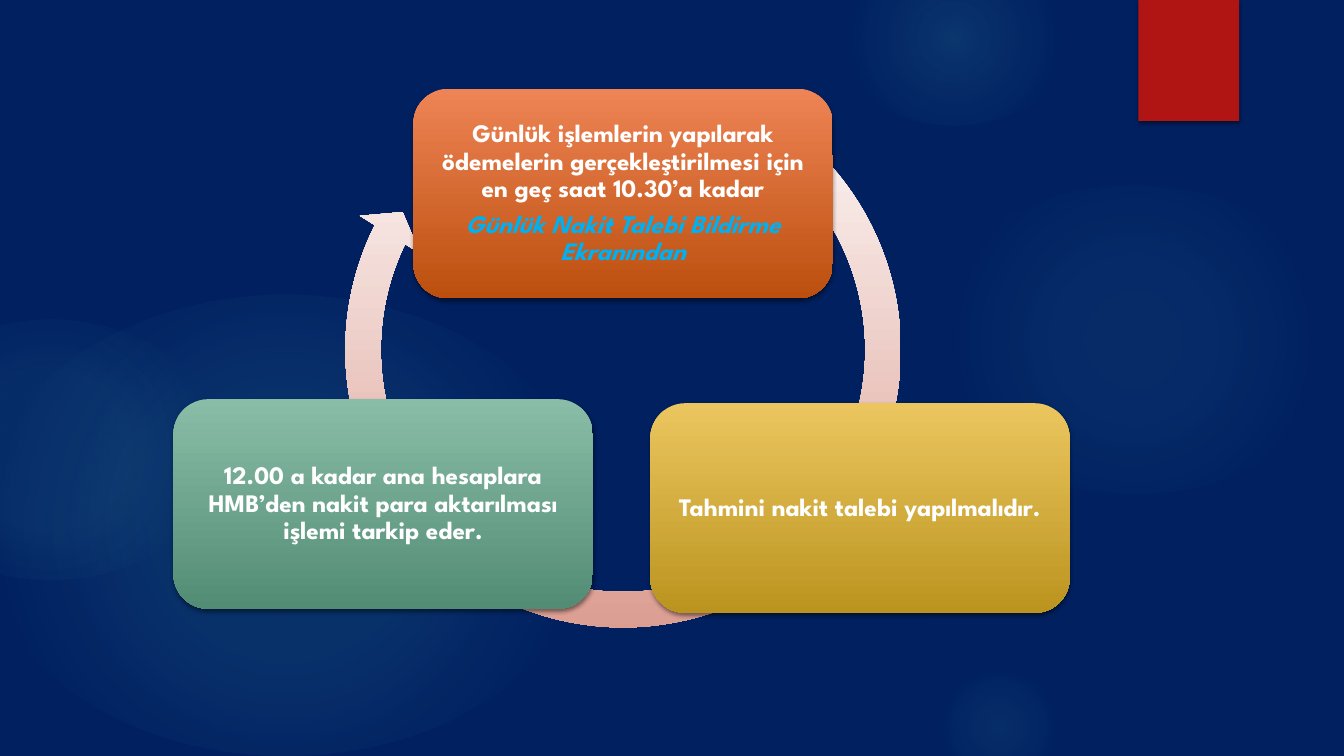
from dataclasses import dataclass

from pptx import Presentation
from pptx.dml.color import RGBColor
from pptx.enum.shapes import MSO_SHAPE as Preset
from pptx.enum.text import MSO_ANCHOR as Anchor, PP_ALIGN as Align
from pptx.oxml import parse_xml
from pptx.oxml.ns import nsdecls, qn
from pptx.shapes.autoshape import Shape
from pptx.slide import Slide
from pptx.util import Pt

PX = 9144


@dataclass(frozen=True)
class Theme:
    background: str = "002060"
    glow: str = "50B9C1"
    ribbon: str = "B01513"
    shadow: str = "000000"
    arrow: tuple[str, str] = ("FFFFFF", "DB9B8F")
    orange: tuple[str, str] = ("EE8455", "BC4F0E")
    gold: tuple[str, str] = ("EBC65F", "BB941F")
    green: tuple[str, str] = ("89BDA7", "538C74")
    text: str = "FFFFFF"
    highlight: str = "00B0F0"
    font: str = "League Spartan"
    size: float = 18
    space_after: float = 6.3


@dataclass(frozen=True)
class Box:
    left: int
    top: int
    width: int
    height: int


@dataclass(frozen=True)
class Stop:
    position: int
    color: str
    opacity: int = 100


@dataclass(frozen=True)
class Glow:
    box: Box
    inner: int
    middle: int
    edge: int


@dataclass(frozen=True)
class Step:
    left: int
    top: int
    colors: tuple[str, str]
    text: str
    highlight: str = ""


THEME = Theme()
STEP_WIDTH, STEP_HEIGHT = 416, 208
LINEAR = '<a:lin ang="5400000" scaled="0"/>'
RADIAL = ('<a:path path="circle"><a:fillToRect l="50000" t="50000" '
          'r="50000" b="50000"/></a:path>')

GLOWS = (
    Glow(Box(919, 183, 411, 308), 7, 6, 69),
    Glow(Box(830, -50, 233, 175), 14, 7, 73),
    Glow(Box(919, 667, 144, 108), 9, 5, 66),
    Glow(Box(-22, 292, 611, 458), 11, 10, 75),
    Glow(Box(-122, 317, 344, 258), 8, 8, 72),
)
RIBBON = Box(1129, 0, 100, 120)
CYCLE = Box(325, 54, 586, 586)
CYCLE_ADJUSTMENTS = (0.06, 3.41, 123.78, 183.01, 0.06)
STEPS = (
    Step(410, 88, THEME.orange,
         "Günlük işlemlerin yapılarak ödemelerin gerçekleştirilmesi için "
         "en geç saat 10.30’a kadar",
         "Günlük Nakit Talebi Bildirme Ekranından"),
    Step(645, 400, THEME.gold, "Tahmini nakit talebi yapılmalıdır."),
    Step(172, 396, THEME.green,
         "12.00 a kadar ana hesaplara HMB’den nakit para aktarılması "
         "işlemi tarkip eder."),
)


def apply_format(target: object, values: dict[str, object]) -> None:
    for name, value in values.items():
        setattr(target, name, value)


def add_shape(slide: Slide, preset: Preset, box: Box) -> Shape:
    shape = slide.shapes.add_shape(
        preset, box.left * PX, box.top * PX, box.width * PX, box.height * PX)
    shape.shadow.inherit = False
    shape.line.fill.background()
    return shape


def fill_gradient(shape: Shape, stops: list[Stop], direction: str) -> None:
    stop_list = "".join(
        f'<a:gs pos="{stop.position * 1000}"><a:srgbClr val="{stop.color}">'
        f'<a:alpha val="{stop.opacity * 1000}"/></a:srgbClr></a:gs>'
        for stop in stops)
    gradient = parse_xml(
        f'<a:gradFill {nsdecls("a")} rotWithShape="1">'
        f'<a:gsLst>{stop_list}</a:gsLst>{direction}</a:gradFill>')
    shape.fill.background()
    properties = shape._element.spPr
    properties.replace(properties.find(qn("a:noFill")), gradient)


def fill_vertical(shape: Shape, colors: tuple[str, str]) -> None:
    top, bottom = colors
    fill_gradient(shape, [Stop(0, top), Stop(100, bottom)], LINEAR)


def add_shadow(shape: Shape) -> None:
    shape._element.spPr.find(qn("a:effectLst")).append(parse_xml(
        f'<a:outerShdw {nsdecls("a")} blurRad="{Pt(3)}" dist="{Pt(2)}" '
        f'dir="5400000" rotWithShape="0"><a:srgbClr val="{THEME.shadow}">'
        f'<a:alpha val="45000"/></a:srgbClr></a:outerShdw>'))


def draw_glow(slide: Slide, glow: Glow) -> None:
    shape = add_shape(slide, Preset.OVAL, glow.box)
    levels = ((0, glow.inner), (36, glow.middle), (glow.edge, 0))
    fill_gradient(
        shape,
        [Stop(position, THEME.glow, opacity) for position, opacity in levels],
        RADIAL)


def draw_ribbon(slide: Slide) -> None:
    ribbon = add_shape(slide, Preset.RECTANGLE, RIBBON)
    ribbon.fill.solid()
    ribbon.fill.fore_color.rgb = RGBColor.from_string(THEME.ribbon)
    add_shadow(ribbon)


def draw_cycle(slide: Slide) -> None:
    arrow = add_shape(slide, Preset.CIRCULAR_ARROW, CYCLE)
    for index, value in enumerate(CYCLE_ADJUSTMENTS):
        arrow.adjustments[index] = value
    fill_vertical(arrow, THEME.arrow)


def draw_step(slide: Slide, step: Step) -> None:
    shape = add_shape(slide, Preset.ROUNDED_RECTANGLE,
                      Box(step.left, step.top, STEP_WIDTH, STEP_HEIGHT))
    fill_vertical(shape, step.colors)
    add_shadow(shape)
    frame = shape.text_frame
    margins = ("margin_left", "margin_top", "margin_right", "margin_bottom")
    apply_format(frame, {"word_wrap": True, "vertical_anchor": Anchor.MIDDLE}
                 | dict.fromkeys(margins, 7 * PX))
    write_paragraph(frame.paragraphs[0], step.text, THEME.text, False)
    if step.highlight:
        write_paragraph(frame.add_paragraph(), step.highlight,
                        THEME.highlight, True)


def write_paragraph(paragraph: object, text: str, color: str,
                    italic: bool) -> None:
    apply_format(paragraph, {
        "alignment": Align.CENTER, "line_spacing": 0.9,
        "space_after": Pt(THEME.space_after)})
    run = paragraph.add_run()
    run.text = text
    apply_format(run.font, {
        "name": THEME.font, "size": Pt(THEME.size),
        "bold": True, "italic": italic})
    run.font.color.rgb = RGBColor.from_string(color)


def main() -> None:
    presentation = Presentation()
    apply_format(presentation,
                 {"slide_width": 1333 * PX, "slide_height": 750 * PX})
    slide = presentation.slides.add_slide(presentation.slide_layouts[6])
    slide.background.fill.solid()
    slide.background.fill.fore_color.rgb = RGBColor.from_string(
        THEME.background)
    for glow in GLOWS:
        draw_glow(slide, glow)
    draw_ribbon(slide)
    draw_cycle(slide)
    for step in STEPS:
        draw_step(slide, step)
    presentation.save("out.pptx")


if __name__ == "__main__":
    main()
